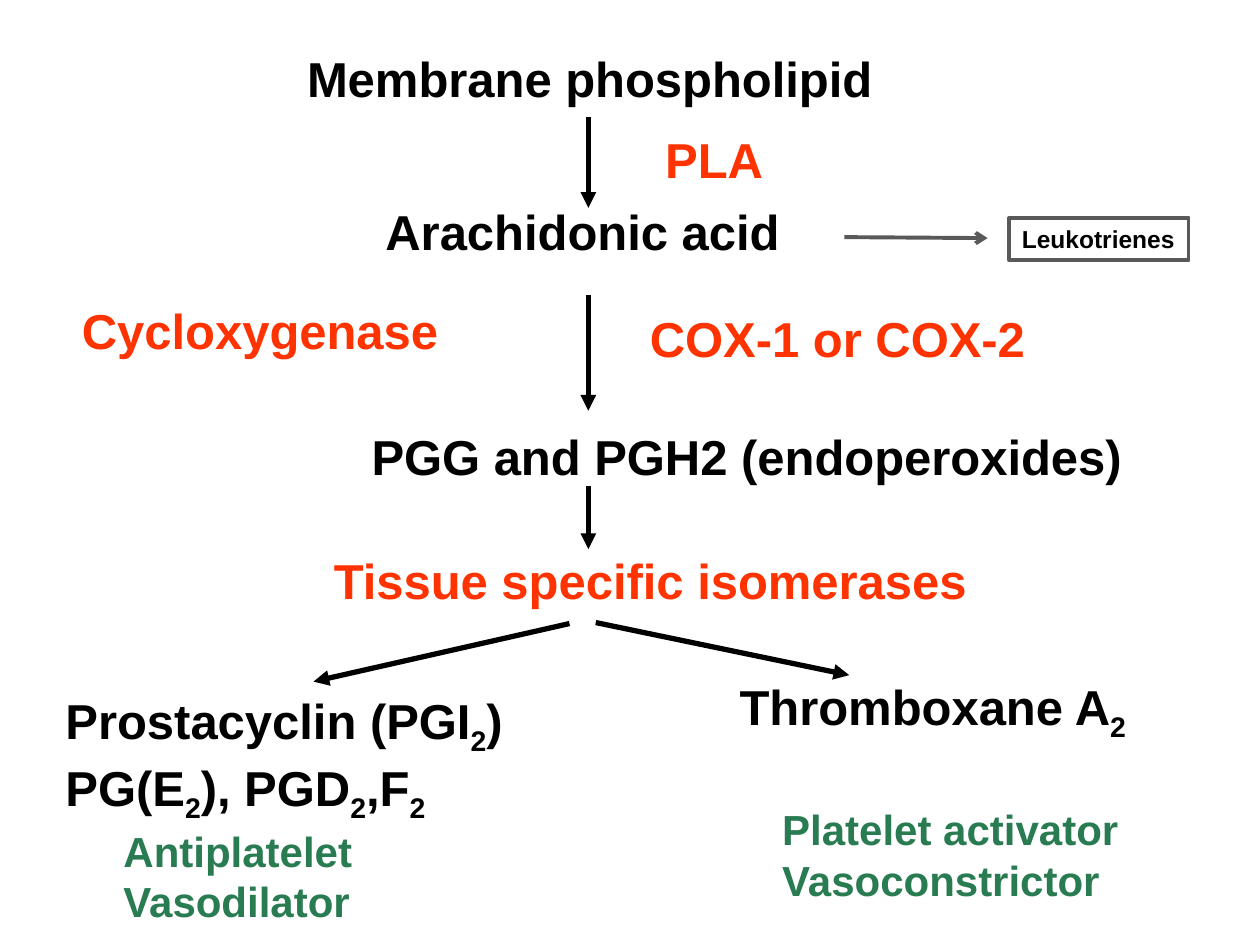
from lxml import etree
from pptx import Presentation
from pptx.dml.color import RGBColor
from pptx.enum.shapes import MSO_CONNECTOR, MSO_SHAPE
from pptx.enum.text import MSO_ANCHOR, MSO_AUTO_SIZE, PP_ALIGN
from pptx.oxml.ns import qn
from pptx.util import Cm, Pt

STRAIGHT = MSO_CONNECTOR.STRAIGHT
RECT = MSO_SHAPE.RECTANGLE
TOP = MSO_ANCHOR.TOP
GROW = MSO_AUTO_SIZE.SHAPE_TO_FIT_TEXT
LEFT = PP_ALIGN.LEFT

BLACK = RGBColor(0x00, 0x00, 0x00)
RED = RGBColor(0xFF, 0x33, 0x00)
GREEN = RGBColor(0x29, 0x7B, 0x52)
GRAY = RGBColor(0x59, 0x59, 0x59)


def write(shape, lines, size, color, wrap=False):
    """Fill a shape with paragraphs; every second part between bars is a subscript."""
    frame = shape.text_frame
    frame.word_wrap = wrap
    frame.auto_size = GROW
    frame.vertical_anchor = TOP
    for i, line in enumerate(lines):
        para = frame.add_paragraph() if i else frame.paragraphs[0]
        para.alignment = LEFT
        para.font.name = "Arial"
        para.font.size = Pt(size)
        para.font.bold = True
        para.font.color.rgb = color
        for j, part in enumerate(line.split("|")):
            if part:
                run = para.add_run()
                run.text = part
                if j % 2:
                    run.font._element.set("baseline", "-25000")


def arrow(x1, y1, x2, y2, color=BLACK, width=3, head="triangle"):
    link = slide.shapes.add_connector(STRAIGHT, Cm(x1), Cm(y1), Cm(x2), Cm(y2))
    link.line.color.rgb = color
    link.line.width = Pt(width)
    etree.SubElement(link.line._get_or_add_ln(), qn("a:tailEnd"), type=head)
    etree.SubElement(link._element.spPr, qn("a:effectLst"))


prs = Presentation()
prs.slide_width = Cm(25.4)
prs.slide_height = Cm(19.05)
slide = prs.slides.add_slide(prs.slide_layouts[6])

# Steps and enzymes: left, top, width, height, colour, lines
steps = [
    (5.94, 0.86, 11.94, 1.45, BLACK, ["Membrane phospholipid"]),
    (13.16, 2.49, 2.51, 1.45, RED, ["PLA"]),
    (7.52, 3.94, 8.48, 1.45, BLACK, ["Arachidonic acid"]),
    (1.4, 5.94, 7.72, 1.45, RED, ["Cycloxygenase"]),
    (12.85, 6.1, 8.08, 1.45, RED, ["COX-1 or COX-2"]),
    (7.24, 8.48, 15.67, 1.45, BLACK, ["PGG and PGH2 (endoperoxides)"]),
    (6.48, 10.97, 13.34, 1.45, RED, ["Tissue specific isomerases"]),
    (1.07, 13.79, 9.4, 2.62, BLACK,
     ["Prostacyclin (PGI|2|)", "PG(E|2|), PGD|2|,F|2"]),
    (14.66, 13.51, 8.41, 1.45, BLACK, ["Thromboxane A|2"]),
]
for x, y, w, h, color, lines in steps:
    box = slide.shapes.add_textbox(Cm(x), Cm(y), Cm(w), Cm(h))
    write(box, lines, 28, color)

# Effects of the two end products
box = slide.shapes.add_textbox(Cm(2.24), Cm(16.51), Cm(5.41), Cm(2.31))
write(box, ["Antiplatelet", "Vasodilator"], 24, GREEN)
box = slide.shapes.add_textbox(Cm(15.52), Cm(16.08), Cm(9.27), Cm(2.31))
write(box, ["Platelet activator Vasoconstrictor"], 24, GREEN, wrap=True)

# Side product
box = slide.shapes.add_shape(RECT, Cm(20.35), Cm(4.39), Cm(3.61), Cm(0.86))
box.shadow.inherit = False
box.fill.background()
box.line.color.rgb = GRAY
box.line.width = Pt(2.25)
write(box, ["Leukotrienes"], 14, BLACK, wrap=True)
arrow(17.02, 4.78, 19.91, 4.8, GRAY, 2.25, "arrow")

# Main path, then the fork
for start, end in [(2.36, 4.19), (5.94, 8.28), (9.8, 11.07)]:
    arrow(11.86, start, 11.86, end)
arrow(11.48, 12.57, 6.32, 13.74)
arrow(12.01, 12.55, 17.12, 13.61)

prs.save("out.pptx")
